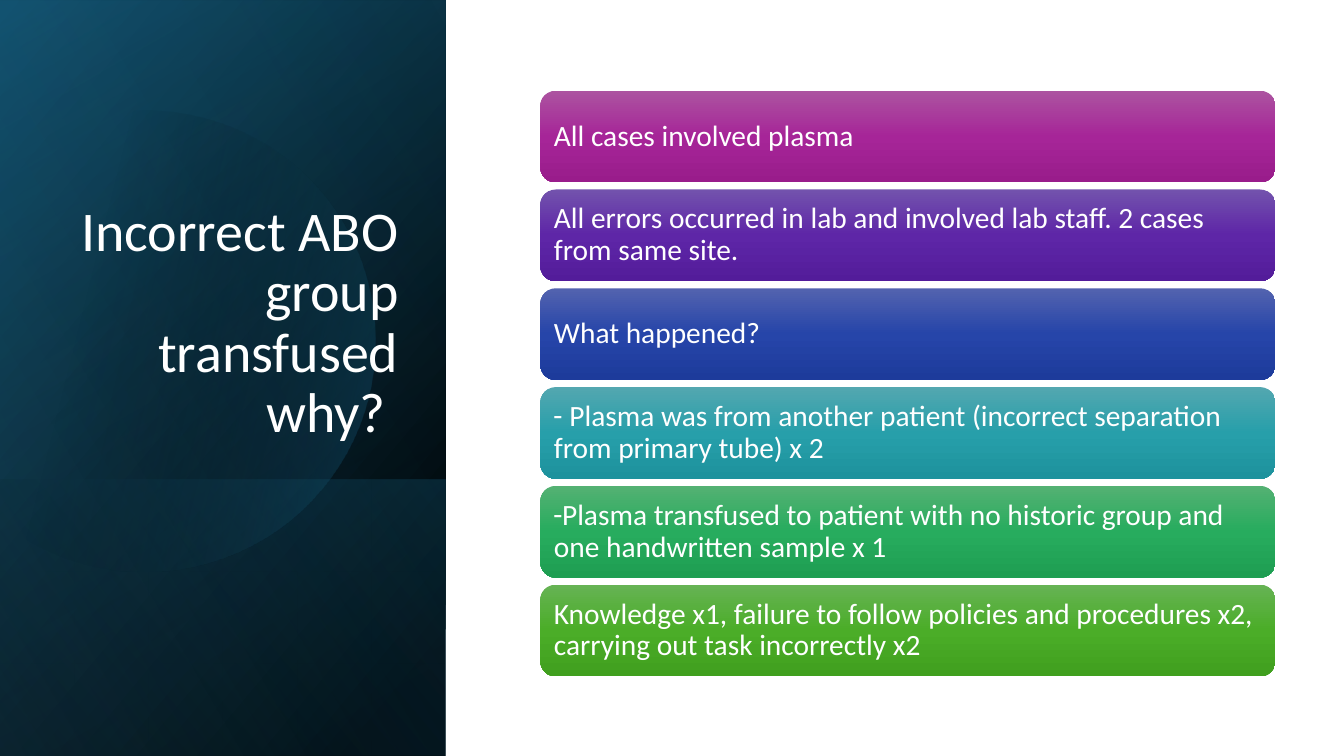
import pptx
import pptx.util
import pptx.oxml
import pptx.oxml.ns
import pptx.enum.shapes
import pptx.enum.text
import pptx.dml.color

Inches = pptx.util.Inches
Shapes = pptx.enum.shapes.MSO_SHAPE
Align = pptx.enum.text.PP_ALIGN
Anchor = pptx.enum.text.MSO_ANCHOR
qn = pptx.oxml.ns.qn

COLORS = {
    "white": "FFFFFF", "black": "000000", "navy": "104862",
    "teal": "156082", "sky": "46B1E1",
}

# Gradient stops: (position %, colour, opacity %)
PANEL_LAYERS = [
    # left, top, width, height, angle, stops
    (-1.54, 1.54, 7.5, 4.42, 50, [(8, "black", 100), (100, "navy", 100)]),
    (-1.54, 1.55, 7.5, 4.42, 30, [(0, "black", 0), (99, "teal", 46)]),
    (0.84, 3.92, 2.74, 4.42, 130, [(2, "teal", 29), (100, "black", 30)]),
]
PANEL_SHEEN = (-1.54, 1.54, 7.5, 4.42, 120, [(0, "black", 0), (99, "sky", 11)])

DISC_START = (1.49, 1.1)
DISC_SEGMENTS = [
    [(2.46, 1.12), (3.35, 1.77), (3.63, 2.75)],
    [(3.98, 3.97), (3.28, 5.23), (2.07, 5.58)],
    [(1.31, 5.8), (0.53, 5.61), (-0.03, 5.14)],
    [(-0.15, 5.03)],
    [(-0.15, 1.75)],
    [(0, 1.61)],
    [(0.23, 1.42), (0.5, 1.28), (0.8, 1.19)],
    [(1.03, 1.13), (1.26, 1.1), (1.49, 1.1)],
]

# Each finding: optional dash, text, gradient colours from top to bottom
FINDINGS = [
    ("", "All cases involved plasma", ("AC53A0", "A62598", "991C8B")),
    ("", "All errors occurred in lab and involved lab staff. 2 cases from same site.",
     ("7353AD", "5E26A7", "531C9A")),
    ("", "What happened?", ("5363AF", "2645A9", "1D3B9B")),
    ("- ", "Plasma was from another patient (incorrect separation from primary tube) x 2",
     ("53A7B0", "279FAA", "1D929D")),
    ("-", "Plasma transfused to patient with no historic group and one handwritten sample x 1",
     ("54B173", "27AC5E", "1E9E52")),
    ("", "Knowledge x1, failure to follow policies and procedures x2, carrying out task incorrectly x2",
     ("66B354", "4BAD28", "409F1E")),
]
FINDING_TOP, FINDING_PITCH = 0.9, 0.98


def add_run(paragraph, text, font="Calibri", size=21, color="white"):
    run = paragraph.add_run()
    run.text = text
    run.font.name = font
    run.font.size = pptx.util.Pt(size)
    run.font.color.rgb = pptx.dml.color.RGBColor.from_string(COLORS[color])


def curve_points(start, segments, steps=24):
    """Turn straight and cubic Bezier segments into a list of points."""
    points = [start]
    for segment in segments:
        if len(segment) == 1:
            points += segment
            continue
        controls = [points[-1], *segment]
        for step in range(1, steps + 1):
            t = step / steps
            weights = ((1 - t) ** 3, 3 * t * (1 - t) ** 2, 3 * t ** 2 * (1 - t), t ** 3)
            points.append(tuple(sum(w * c[axis] for w, c in zip(weights, controls))
                                for axis in (0, 1)))
    return points


class SlideBuilder:
    def __init__(self, slide):
        self.slide = slide

    def paint(self, shape, angle, stops):
        """Give a shape a linear gradient with opacity, no line and no shadow."""
        shape.shadow.inherit = False
        shape.line.fill.background()
        shape.fill.gradient()
        shape.fill.gradient_angle = 0
        gradient = shape._element.spPr.find(qn("a:gradFill"))
        gradient.find(qn("a:lin")).set("ang", str(round(angle * 60000)))
        stop_list = gradient.find(qn("a:gsLst"))
        for old_stop in list(stop_list):
            stop_list.remove(old_stop)
        for position, color, opacity in stops:
            stop_list.append(pptx.oxml.parse_xml(
                f'<a:gs {pptx.oxml.ns.nsdecls("a")} pos="{position * 1000}">'
                f'<a:srgbClr val="{COLORS.get(color, color)}">'
                f'<a:alpha val="{opacity * 1000}"/></a:srgbClr></a:gs>'))

    def panel_layer(self, left, top, width, height, angle, stops):
        """Add a mirrored rectangle turned upright."""
        layer = self.slide.shapes.add_shape(
            Shapes.RECTANGLE, Inches(left), Inches(top), Inches(width), Inches(height))
        layer.rotation = 90
        layer._element.spPr.find(qn("a:xfrm")).set("flipH", "1")
        self.paint(layer, angle, stops)

    def disc(self, points, angle, stops):
        outline = [(Inches(x), Inches(y)) for x, y in points]
        builder = self.slide.shapes.build_freeform(*outline[0])
        builder.add_line_segments(outline[1:], close=True)
        self.paint(builder.convert_to_shape(), angle, stops)

    def title(self, text, left, top, width, height):
        box = self.slide.shapes.add_textbox(
            Inches(left), Inches(top), Inches(width), Inches(height))
        frame = box.text_frame
        frame.word_wrap = True
        frame.vertical_anchor = Anchor.BOTTOM
        paragraph = frame.paragraphs[0]
        paragraph.alignment = Align.RIGHT
        paragraph.line_spacing = 0.9
        add_run(paragraph, text, size=40)

    def finding(self, top, dash, text, colors):
        bar = self.slide.shapes.add_shape(
            Shapes.ROUNDED_RECTANGLE, Inches(5.36), Inches(top), Inches(7.29), Inches(0.91))
        self.paint(bar, 90, [(pos, color, 100) for pos, color in zip((0, 50, 100), colors)])
        frame = bar.text_frame
        frame.word_wrap = True
        frame.vertical_anchor = Anchor.MIDDLE
        frame.margin_left = frame.margin_right = Inches(0.09)
        frame.margin_top = frame.margin_bottom = Inches(0.09)
        paragraph = frame.paragraphs[0]
        paragraph.alignment = Align.LEFT
        paragraph.line_spacing = 0.9
        if dash:
            add_run(paragraph, dash, font="Roboto")
        add_run(paragraph, text)


def main():
    deck = pptx.Presentation()
    deck.slide_width, deck.slide_height = Inches(13.33), Inches(7.5)
    builder = SlideBuilder(deck.slides.add_slide(deck.slide_layouts[6]))

    for layer in PANEL_LAYERS:
        builder.panel_layer(*layer)
    builder.disc(curve_points(DISC_START, DISC_SEGMENTS), 14,
                 [(29, "black", 0), (100, "teal", 43)])
    builder.panel_layer(*PANEL_SHEEN)
    builder.title("Incorrect ABO group transfused why? ", 0.64, 1.84, 3.41, 2.62)

    for row, (dash, text, colors) in enumerate(FINDINGS):
        builder.finding(FINDING_TOP + row * FINDING_PITCH, dash, text, colors)

    deck.save("out.pptx")


if __name__ == "__main__":
    main()
